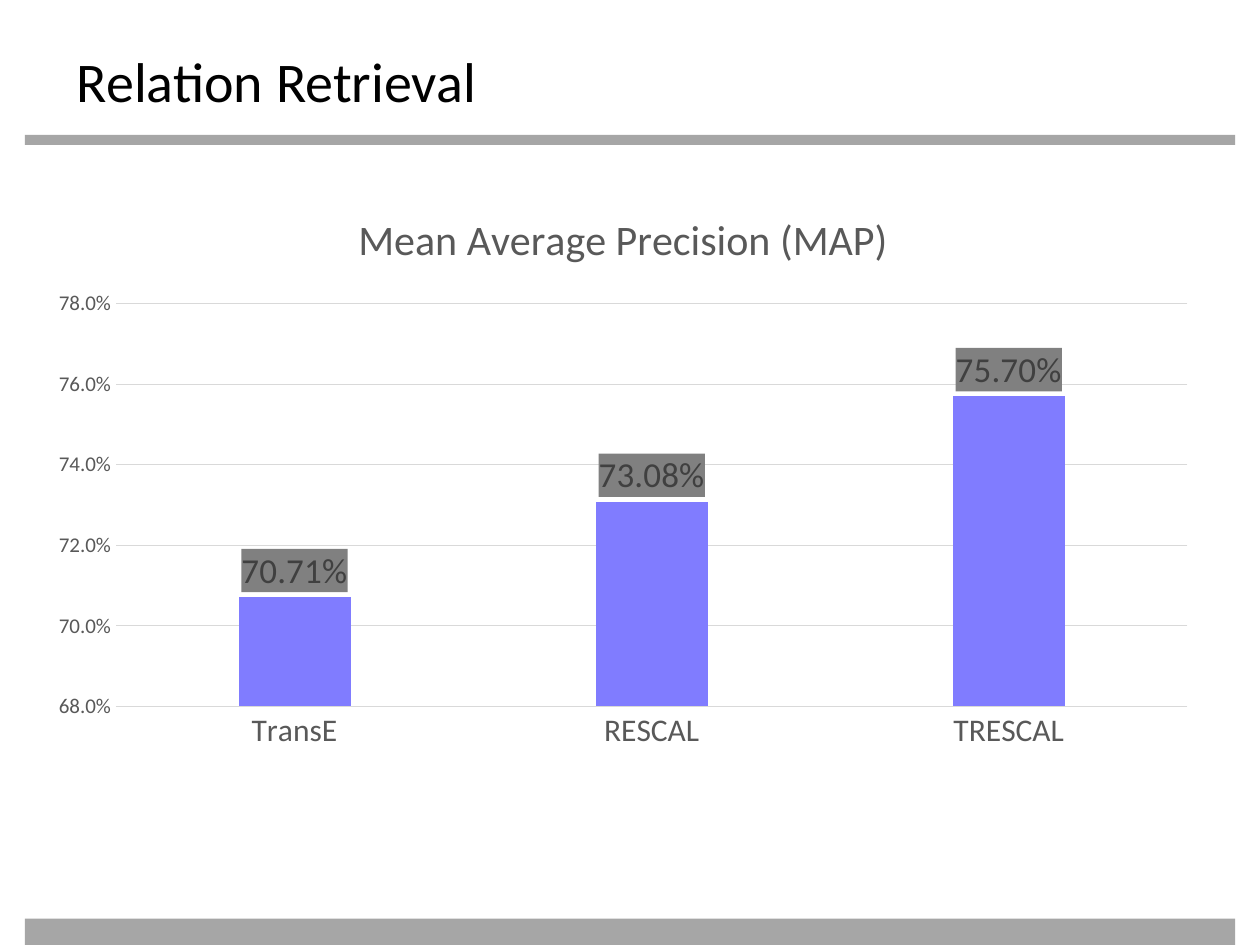
from pptx import Presentation
from pptx.chart.data import CategoryChartData
from pptx.dml.color import RGBColor
from pptx.enum.chart import XL_CHART_TYPE as ChartType, XL_LABEL_POSITION as LabelPos, XL_TICK_MARK as Tick
from pptx.enum.shapes import MSO_SHAPE as Shape
from pptx.enum.text import MSO_ANCHOR as Anchor
from pptx.oxml import parse_xml
from pptx.oxml.ns import nsdecls, qn
from pptx.util import Cm, Pt

COLORS = {
    "title": "000000",
    "bar": "A6A6A6",
    "text": "595959",
    "grid": "D9D9D9",
    "column": "807CFF",
    "label": "404040",
    "label_fill": "808080",
}
FONT = "Calibri"


def style_font(font, size, color):
    font.name = FONT
    font.size = Pt(size)
    font.bold = False
    font.color.rgb = RGBColor.from_string(COLORS[color])


def write_text(tf, text, size=18, color="text"):
    r = tf.paragraphs[0].add_run()
    r.text = text
    style_font(r.font, size, color)


prs = Presentation()
prs.slide_width, prs.slide_height = Cm(25.4), Cm(19.05)
s = prs.slides.add_slide(prs.slide_layouts[6])

for top, height in ((2.72, 0.2), (18.52, 0.53)):
    sp = s.shapes.add_shape(Shape.RECTANGLE, Cm(0.5), Cm(top), Cm(24.4), Cm(height))
    sp.shadow.inherit = False
    sp.fill.solid()
    sp.fill.fore_color.rgb = RGBColor.from_string(COLORS["bar"])
    sp.line.fill.background()

tf = s.shapes.add_textbox(Cm(1.3), Cm(0.71), Cm(22.86), Cm(1.4)).text_frame
tf.word_wrap = True
tf.vertical_anchor = Anchor.TOP
tf.margin_top = Cm(0.23)
write_text(tf, "Relation Retrieval", size=32, color="title")

data = CategoryChartData(number_format="0.00%")
data.categories = ["TransE", "RESCAL", "TRESCAL"]
data.add_series("Series 1", [0.7071, 0.7308, 0.757])
chart = s.shapes.add_chart(
    ChartType.COLUMN_CLUSTERED, Cm(0.71), Cm(3.73), Cm(23.7), Cm(11.61), data
).chart
style_font(chart.font, 10, "title")
chart.has_legend = False
chart.has_title = True
chart.chart_title.include_in_layout = False
write_text(chart.chart_title.text_frame, "Mean Average Precision (MAP)", size=24)

cat_axis, val_axis = chart.category_axis, chart.value_axis
for axis, size in ((cat_axis, 18), (val_axis, 12)):
    axis.major_tick_mark = axis.minor_tick_mark = Tick.NONE
    style_font(axis.tick_labels.font, size, "text")
val_axis.minimum_scale, val_axis.maximum_scale = 0.68, 0.78
val_axis.major_unit = 0.02
val_axis.tick_labels.number_format = "0.0%"
val_axis.tick_labels.number_format_is_linked = False
val_axis.format.line.fill.background()
for line in (cat_axis.format.line, val_axis.major_gridlines.format.line):
    line.color.rgb = RGBColor.from_string(COLORS["grid"])
    line.width = Pt(0.75)

plot = chart.plots[0]
plot.vary_by_categories = False
plot.gap_width, plot.overlap = 219, -27
series = plot.series[0]
series.format.fill.solid()
series.format.fill.fore_color.rgb = RGBColor.from_string(COLORS["column"])

labels = series.data_labels
labels.show_value = True
labels.position = LabelPos.OUTSIDE_END
labels.number_format = "0.00%"
labels.number_format_is_linked = False
style_font(labels.font, 20, "label")
label_box = parse_xml(
    f'<c:spPr {nsdecls("c", "a")}>'
    f'<a:solidFill><a:srgbClr val="{COLORS["label_fill"]}"/></a:solidFill>'
    "<a:ln><a:noFill/></a:ln></c:spPr>"
)
labels._element.find(qn("c:txPr")).addprevious(label_box)

prs.save("out.pptx")
